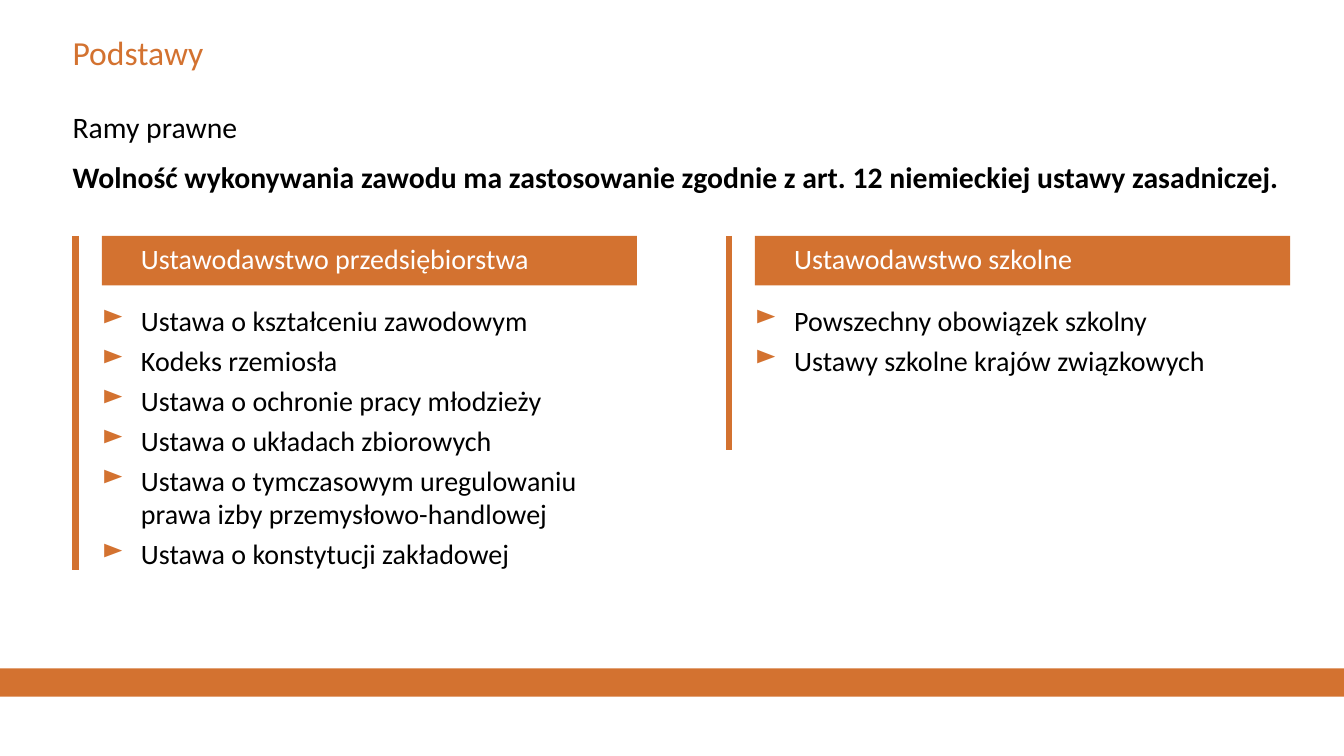
from pptx import Presentation
from pptx.dml.color import RGBColor
from pptx.enum.shapes import MSO_CONNECTOR, MSO_SHAPE
from pptx.enum.text import MSO_ANCHOR, PP_ALIGN
from pptx.oxml.ns import qn
from pptx.util import Pt
from lxml.etree import SubElement

ORANGE = RGBColor(0xD3, 0x72, 0x30)
BLACK = RGBColor(0, 0, 0)
WHITE = RGBColor(255, 255, 255)
FONT = "Calibri"

WIDTH, HEIGHT = 960, 540
LEFT = 51.84
TOP = 168.5
COL_LEFT = 72.7
COL_STEP = 466.6
COL_WIDTH = 382.3
HEAD_HEIGHT = 35.3
BAR_GAP = 18.7
LIST_TOP = 216.7
LIST_HEIGHT = 206
INDENT = 28

COLUMNS = [
    ("Ustawodawstwo przedsiębiorstwa", 238.3, [
        "Ustawa o kształceniu zawodowym",
        "Kodeks rzemiosła",
        "Ustawa o ochronie pracy młodzieży",
        "Ustawa o układach zbiorowych",
        "Ustawa o tymczasowym uregulowaniu prawa izby przemysłowo-handlowej",
        "Ustawa o konstytucji zakładowej",
    ]),
    ("Ustawodawstwo szkolne", 152.6, [
        "Powszechny obowiązek szkolny",
        "Ustawy szkolne krajów związkowych",
    ]),
]


def set_frame(frame, left=0):
    frame.word_wrap = True
    frame.margin_left = Pt(left)
    frame.margin_top = frame.margin_right = frame.margin_bottom = 0


def set_font(para, size, color, bold=False):
    font = para.font
    font.name = FONT
    font.size = Pt(size)
    font.bold = bold
    font.color.rgb = color


def add_box(slide, left, top, width, height, lines):
    """Add a text box with one paragraph per line and return its paragraphs."""
    box = slide.shapes.add_textbox(Pt(left), Pt(top), Pt(width), Pt(height))
    frame = box.text_frame
    set_frame(frame)
    frame.text = "\n".join(lines)
    return frame.paragraphs


def add_rect(slide, left, top, width, height):
    rect = slide.shapes.add_shape(
        MSO_SHAPE.RECTANGLE, Pt(left), Pt(top), Pt(width), Pt(height))
    rect.shadow.inherit = False
    rect.fill.solid()
    rect.fill.fore_color.rgb = ORANGE
    rect.line.fill.background()
    return rect


def add_bar(slide, left, top, height):
    bar = slide.shapes.add_connector(
        MSO_CONNECTOR.STRAIGHT, Pt(left), Pt(top), Pt(left), Pt(top + height))
    bar.line.color.rgb = ORANGE
    bar.line.width = Pt(4.5)
    SubElement(bar._element.spPr, qn("a:effectLst"))


def add_bullet(para):
    props = para._p.get_or_add_pPr()
    props.set("marL", str(Pt(INDENT)))
    props.set("indent", str(-Pt(INDENT)))
    color = SubElement(props, qn("a:buClr"))
    SubElement(color, qn("a:srgbClr")).set("val", str(ORANGE))
    SubElement(props, qn("a:buChar")).set("char", "►")


def add_head(slide, left, text):
    head = add_rect(slide, left, TOP, COL_WIDTH, HEAD_HEIGHT)
    frame = head.text_frame
    set_frame(frame, INDENT)
    frame.vertical_anchor = MSO_ANCHOR.MIDDLE
    frame.text = text
    para = frame.paragraphs[0]
    para.alignment = PP_ALIGN.LEFT
    para.line_spacing = 0.9
    set_font(para, 20, WHITE)


def add_list(slide, left, items):
    paras = add_box(slide, left, LIST_TOP, COL_WIDTH, LIST_HEIGHT, items)
    for i, para in enumerate(paras):
        add_bullet(para)
        if i:
            para.space_before = Pt(4.5)
        set_font(para, 20, BLACK)


def add_intro(slide):
    title = add_box(slide, LEFT, 23, 708.5, 35.3, ["Podstawy"])[0]
    set_font(title, 24, ORANGE)
    topic, claim = add_box(slide, LEFT, 82.8, 870.5, 79.2, [
        "Ramy prawne",
        "Wolność wykonywania zawodu ma zastosowanie zgodnie z art. 12 "
        "niemieckiej ustawy zasadniczej.",
    ])
    topic.line_spacing = 0.8
    set_font(topic, 21.2, BLACK)
    claim.line_spacing = 0.95
    claim.space_before = Pt(12)
    set_font(claim, 21.2, BLACK, bold=True)


def main():
    deck = Presentation()
    deck.slide_width, deck.slide_height = Pt(WIDTH), Pt(HEIGHT)
    slide = deck.slides.add_slide(deck.slide_layouts[6])
    add_rect(slide, 0, 477.4, WIDTH, 20.2)
    add_intro(slide)
    for i, (head, height, items) in enumerate(COLUMNS):
        left = COL_LEFT + i * COL_STEP
        add_head(slide, left, head)
        add_list(slide, left, items)
        add_bar(slide, left - BAR_GAP, TOP, height)
    deck.save("out.pptx")


if __name__ == "__main__":
    main()
